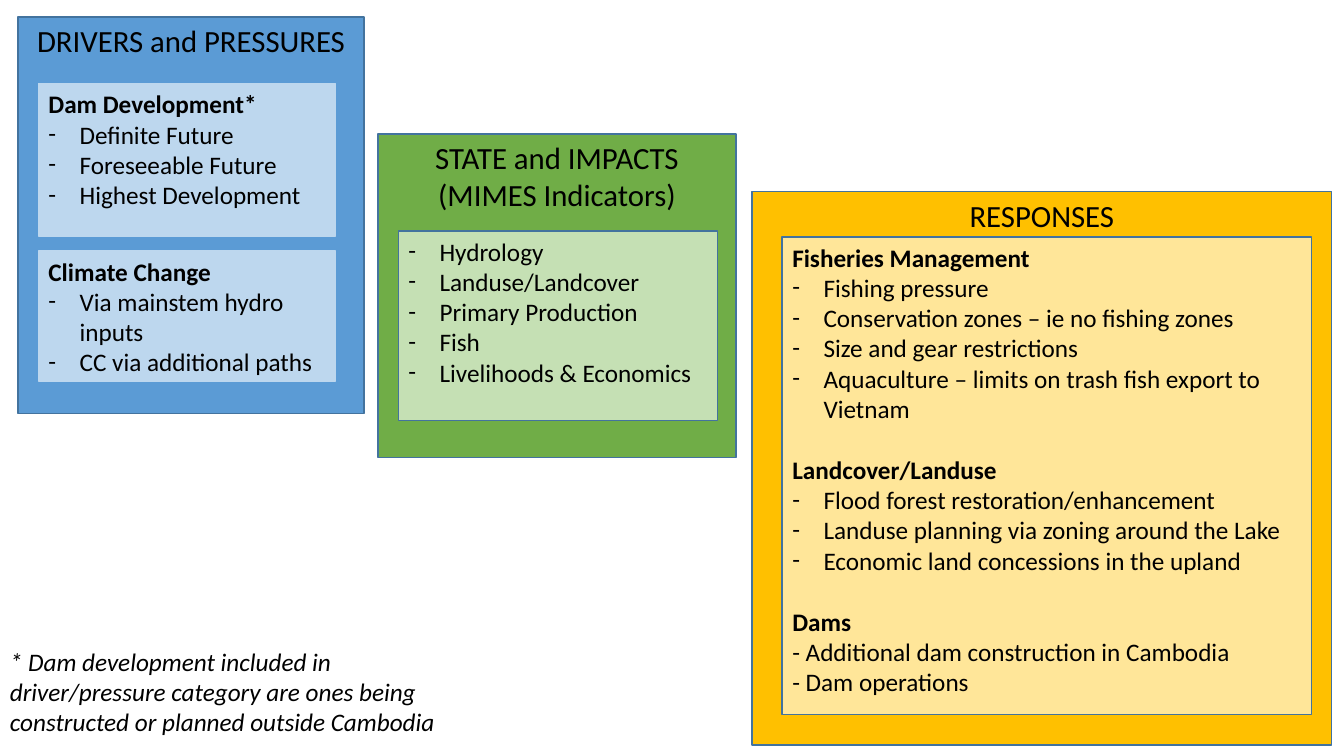
"""Build a slide of drivers, state and responses as three stepped panels."""
from dataclasses import dataclass

from lxml import etree
from pptx import Presentation
from pptx.dml.color import RGBColor
from pptx.enum.shapes import MSO_SHAPE
from pptx.enum.text import MSO_ANCHOR, MSO_AUTO_SIZE, PP_ALIGN
from pptx.oxml.ns import qn
from pptx.util import Inches, Pt

RECTANGLE = MSO_SHAPE.RECTANGLE
TOP = MSO_ANCHOR.TOP
NO_AUTOFIT = MSO_AUTO_SIZE.NONE
GROW_SHAPE = MSO_AUTO_SIZE.SHAPE_TO_FIT_TEXT
CENTER, LEFT = PP_ALIGN.CENTER, PP_ALIGN.LEFT

SLIDE_WIDTH, SLIDE_HEIGHT = Inches(13.33), Inches(7.5)
COMPARISON_LAYOUT = 4
FONT = "Calibri"
HEADING_SIZE, BODY_SIZE = 22, 18
SECTION_GAP = Pt(22)
HANGING_INDENT = Inches(0.31)
BLACK, OUTLINE = "000000", "43739E"


@dataclass(frozen=True)
class Area:
    """Hold a place in percent of the slide's width and height."""
    left: float
    top: float
    width: float
    height: float


@dataclass(frozen=True)
class Section:
    """Hold an optional bold heading and its lines."""
    lines: tuple[str, ...]
    heading: str = ""
    bulleted: bool = True


@dataclass(frozen=True)
class ListBox:
    """Hold a list box inside a panel."""
    area: Area
    sections: tuple[Section, ...]
    outline: str = OUTLINE


@dataclass(frozen=True)
class Panel:
    """Hold a coloured panel and its list boxes."""
    heading: str
    area: Area
    fill: str
    list_fill: str
    list_boxes: tuple[ListBox, ...]


PANELS = (
    Panel("DRIVERS and PRESSURES", Area(1.35, 2.27, 25.73, 52.4), "5B9BD5", "BDD7EE", (
        ListBox(Area(2.85, 11.07, 22.13, 20.13), (
            Section(("Definite Future", "Foreseeable Future", "Highest Development"),
                    "Dam Development*"),), "BDD7EE"),
        ListBox(Area(2.85, 33.2, 22.13, 17.2), (
            Section(("Via mainstem hydro inputs", "CC via additional paths"),
                    "Climate Change"),), "BDD7EE"),
    )),
    Panel("STATE and IMPACTS\n(MIMES Indicators)", Area(28.13, 17.73, 26.63, 42.8),
          "70AD47", "C5E0B4", (
        ListBox(Area(29.63, 30.53, 23.78, 25.07), (
            Section(("Hydrology", "Landuse/Landcover", "Primary Production", "Fish",
                     "Livelihoods & Economics")),)),
    )),
    Panel("RESPONSES", Area(55.95, 25.33, 43.13, 73.2), "FFC000", "FFE699", (
        ListBox(Area(58.2, 31.33, 39.38, 63.2), (
            Section(("Fishing pressure", "Conservation zones – ie no fishing zones",
                     "Size and gear restrictions",
                     "Aquaculture – limits on trash fish export to Vietnam"),
                    "Fisheries Management"),
            Section(("Flood forest restoration/enhancement",
                     "Landuse planning via zoning around the Lake",
                     "Economic land concessions in the upland"), "Landcover/Landuse"),
            Section(("- Additional dam construction in Cambodia", "- Dam operations"),
                    "Dams", bulleted=False),
        )),
    )),
)
NOTE_AREA = Area(0, 84.8, 34.5, 13.47)
NOTE = ("* Dam development included in driver/pressure category are ones being "
        "constructed or planned outside Cambodia")


def color(value: str) -> RGBColor:
    """Turn a hex string into a colour."""
    return RGBColor.from_string(value)


def place(shape, area: Area) -> None:
    """Move and size a shape."""
    shape.left, shape.width = (int(SLIDE_WIDTH * share / 100) for share in (area.left, area.width))
    shape.top, shape.height = (int(SLIDE_HEIGHT * share / 100) for share in (area.top, area.height))


def paint(shape, fill: str, outline: str) -> None:
    """Give a shape a plain fill and a thin outline."""
    shape.fill.solid()
    shape.fill.fore_color.rgb = color(fill)
    shape.line.color.rgb = color(outline)
    shape.line.width = Pt(1)


def write(shape, text: str, size: int, alignment=LEFT, auto_size=NO_AUTOFIT) -> None:
    """Fill a shape with evenly formatted text starting at its top."""
    frame = shape.text_frame
    frame.text = text
    frame.word_wrap = True
    frame.auto_size = auto_size
    frame.vertical_anchor = TOP
    for paragraph in frame.paragraphs:
        paragraph.alignment = alignment
        paragraph.space_before = Pt(0)
        for run in paragraph.runs:
            run.font.name = FONT
            run.font.size = Pt(size)
            run.font.bold = False
            run.font.color.rgb = color(BLACK)


def set_bullet(paragraph, bulleted: bool) -> None:
    """Give a paragraph a hanging dash, or no bullet."""
    properties = paragraph._p.get_or_add_pPr()
    indent = HANGING_INDENT if bulleted else 0
    properties.set("marL", str(indent))
    properties.set("indent", str(-indent))
    if bulleted:
        etree.SubElement(properties, qn("a:buFont")).set("typeface", FONT)
        etree.SubElement(properties, qn("a:buChar")).set("char", "-")
    else:
        etree.SubElement(properties, qn("a:buNone"))


def fill_list(shape, sections: tuple[Section, ...]) -> None:
    """Write sections of headings and lines into a list box."""
    rows = []
    for section in sections:
        if section.heading:
            rows.append((section.heading, True, False))
        rows.extend((line, False, section.bulleted) for line in section.lines)
    write(shape, "\n".join(text for text, _, _ in rows), BODY_SIZE)
    for index, (paragraph, (_, is_heading, bulleted)) in enumerate(
            zip(shape.text_frame.paragraphs, rows)):
        if is_heading:
            paragraph.runs[0].font.bold = True
            paragraph.space_before = SECTION_GAP if index else Pt(0)
        set_bullet(paragraph, bulleted)


def draw_panel(slide, shape, panel: Panel, list_shapes) -> None:
    """Draw a panel with its list boxes in front."""
    place(shape, panel.area)
    paint(shape, panel.fill, OUTLINE)
    write(shape, panel.heading, HEADING_SIZE, CENTER)
    for list_box in panel.list_boxes:
        list_shape = next(list_shapes)
        slide.shapes._spTree.append(list_shape._element)
        place(list_shape, list_box.area)
        paint(list_shape, panel.list_fill, list_box.outline)
        fill_list(list_shape, list_box.sections)


def main() -> None:
    """Build and save the presentation."""
    presentation = Presentation()
    presentation.slide_width, presentation.slide_height = SLIDE_WIDTH, SLIDE_HEIGHT
    slide = presentation.slides.add_slide(presentation.slide_layouts[COMPARISON_LAYOUT])
    title, *bodies = list(slide.placeholders)
    list_shapes = iter(bodies)
    for index, panel in enumerate(PANELS):
        shape = title
        if index:
            shape = slide.shapes.add_shape(RECTANGLE, 0, 0, 0, 0)
            shape.shadow.inherit = False
        draw_panel(slide, shape, panel, list_shapes)

    note = slide.shapes.add_textbox(0, 0, 0, 0)
    place(note, NOTE_AREA)
    write(note, NOTE, BODY_SIZE, auto_size=GROW_SHAPE)
    note.text_frame.paragraphs[0].runs[0].font.italic = True
    presentation.save("out.pptx")


if __name__ == "__main__":
    main()
